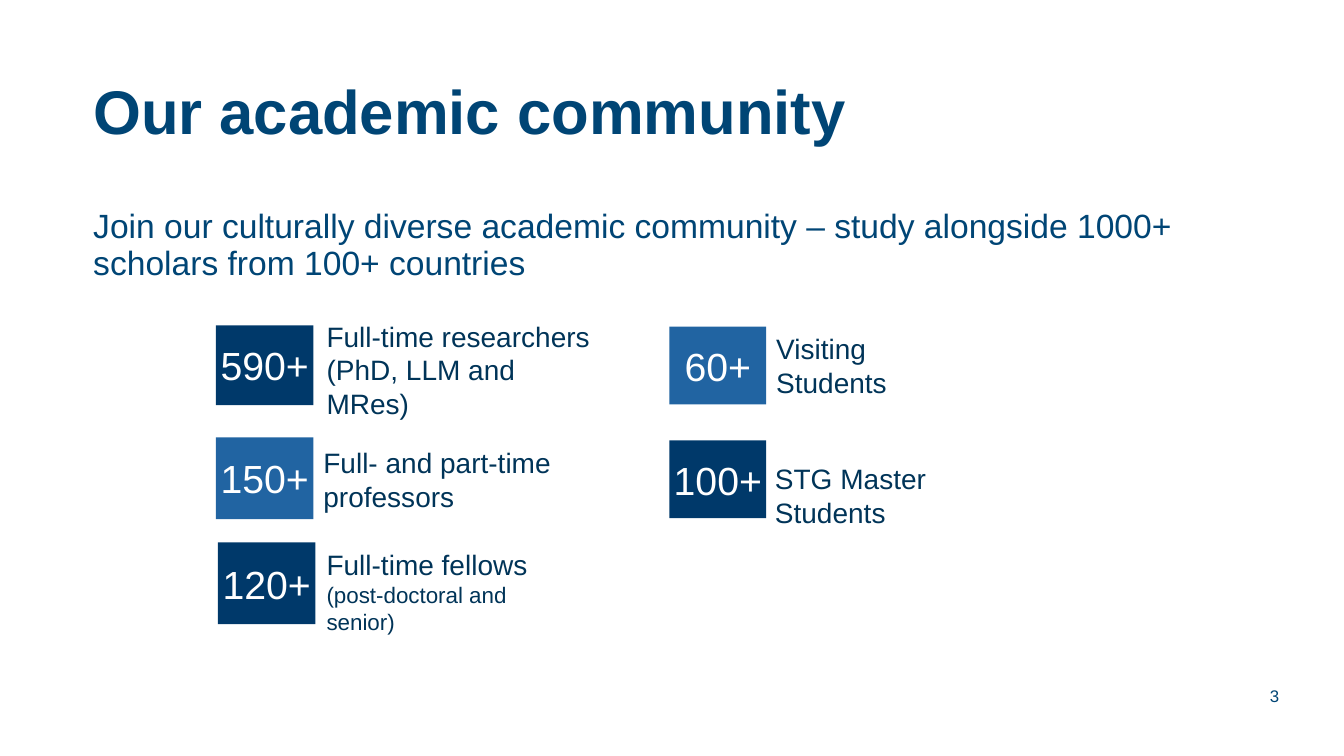
import pptx
import pptx.util
import pptx.dml.color
import pptx.enum.shapes
import pptx.enum.text

Cm = pptx.util.Cm
ALIGN = pptx.enum.text.PP_ALIGN
ANCHOR = pptx.enum.text.MSO_ANCHOR
BLUE, NAVY, MID, INK, WHITE = "004575", "00396A", "2164A2", "003458", "FFFFFF"


def color(code):
    return pptx.dml.color.RGBColor.from_string(code)


def style(part, size, code, bold=False, align=ALIGN.LEFT):
    part.alignment = align
    for run in part.runs:
        run.font.name = "Arial"
        run.font.size = pptx.util.Pt(size)
        run.font.bold = bold
        run.font.color.rgb = color(code)


def write(shapes, box, lines, code, bold=False, align=ALIGN.LEFT):
    shape = shapes.add_textbox(*map(Cm, box))
    frame = shape.text_frame
    frame.word_wrap = True
    frame.text = "\n".join(text for text, size in lines)
    for part, (text, size) in zip(frame.paragraphs, lines):
        style(part, size, code, bold, align)
    return frame


def header(slide, box):
    left, top, width, height = box
    title = write(slide.shapes, (left, top, width, 3.2),
                  [("Our academic community", 44)], BLUE, bold=True)
    lead = write(slide.shapes, (left, top + 3.23, width, height - 3.23),
                 [("Join our culturally diverse academic community – study "
                   "alongside 1000+ scholars from 100+ countries", 24)], BLUE)
    for frame in (title, lead):
        frame.paragraphs[0].line_spacing = 0.9


def card(slide, box, fill, count, lines, shift, width):
    left, top, wide, high = box
    group = slide.shapes.add_group_shape()
    tile = group.shapes.add_shape(
        pptx.enum.shapes.MSO_SHAPE.RECTANGLE, *map(Cm, box))
    tile.shadow.inherit = False
    tile.fill.solid()
    tile.fill.fore_color.rgb = color(fill)
    tile.line.fill.background()
    frame = tile.text_frame
    frame.margin_left = frame.margin_right = 0
    frame.margin_top = frame.margin_bottom = 0
    frame.vertical_anchor = ANCHOR.MIDDLE
    frame.text = count
    style(frame.paragraphs[0], 28, WHITE, align=ALIGN.CENTER)
    right, down, tall = shift
    label = write(group.shapes, (left + wide + right, top + down, width, tall),
                  lines, INK)
    label.auto_size = pptx.enum.text.MSO_AUTO_SIZE.SHAPE_TO_FIT_TEXT


def cards(slide):
    card(slide, (5.44, 8.2, 2.46, 2.01), NAVY, "590+",
         [("Full-time researchers (PhD, LLM and MRes)", 20)],
         (0.08, -0.28, 2.82), 7.37)
    card(slide, (5.44, 11.02, 2.46, 2.06), MID, "150+",
         [("Full- and part-time professors", 20)], (0, 0.08, 1.96), 6.58)
    card(slide, (5.49, 13.67, 2.46, 2.06), NAVY, "120+",
         [("Full-time fellows", 20), ("(post-doctoral and senior)", 16)],
         (0.03, 0, 1.8), 6.53)
    card(slide, (16.87, 8.23, 2.44, 1.96), MID, "60+",
         [("Visiting Students", 20)], (0, 0, 1.96), 5.28)
    card(slide, (16.87, 11.1, 2.44, 1.96), NAVY, "100+",
         [("STG Master Students", 20)], (-0.03, 0.41, 1.96), 6.53)


def footer(slide, box):
    frame = write(slide.shapes, box, [("3", 12)], BLUE, align=ALIGN.CENTER)
    frame.vertical_anchor = ANCHOR.BOTTOM


def main():
    deck = pptx.Presentation()
    deck.slide_width, deck.slide_height = Cm(33.87), Cm(19.05)
    slide = deck.slides.add_slide(deck.slide_layouts[6])
    header(slide, (2.1, 1.93, 29.72, 14.53))
    footer(slide, (31.5, 16.89, 1.24, 1.02))
    cards(slide)
    deck.save("out.pptx")


if __name__ == "__main__":
    main()
